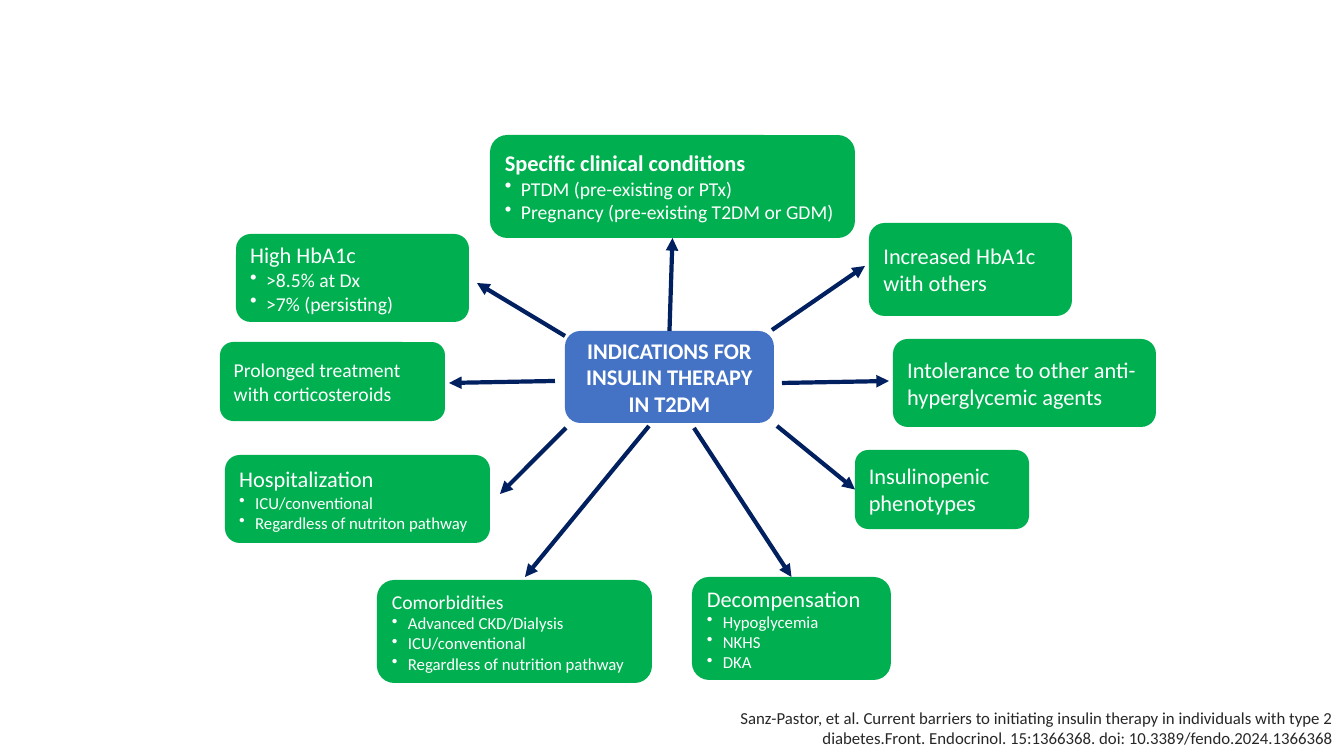
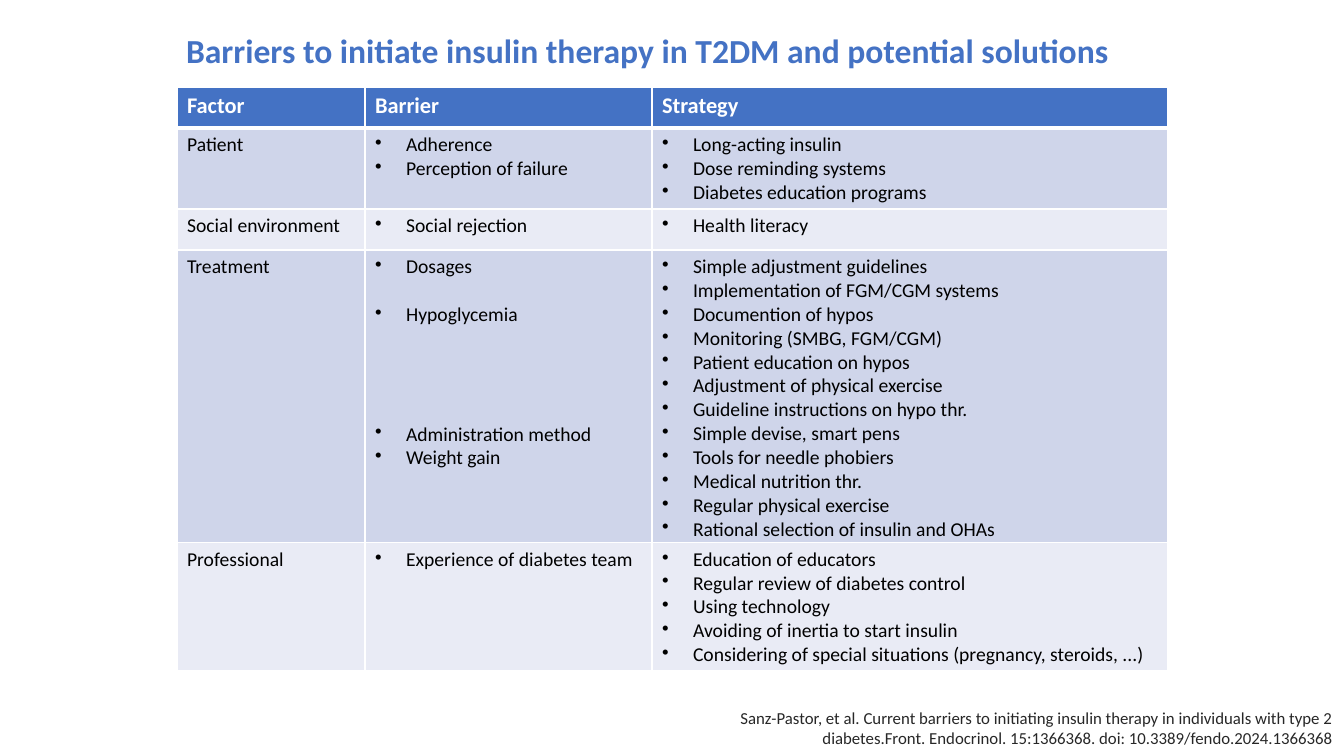
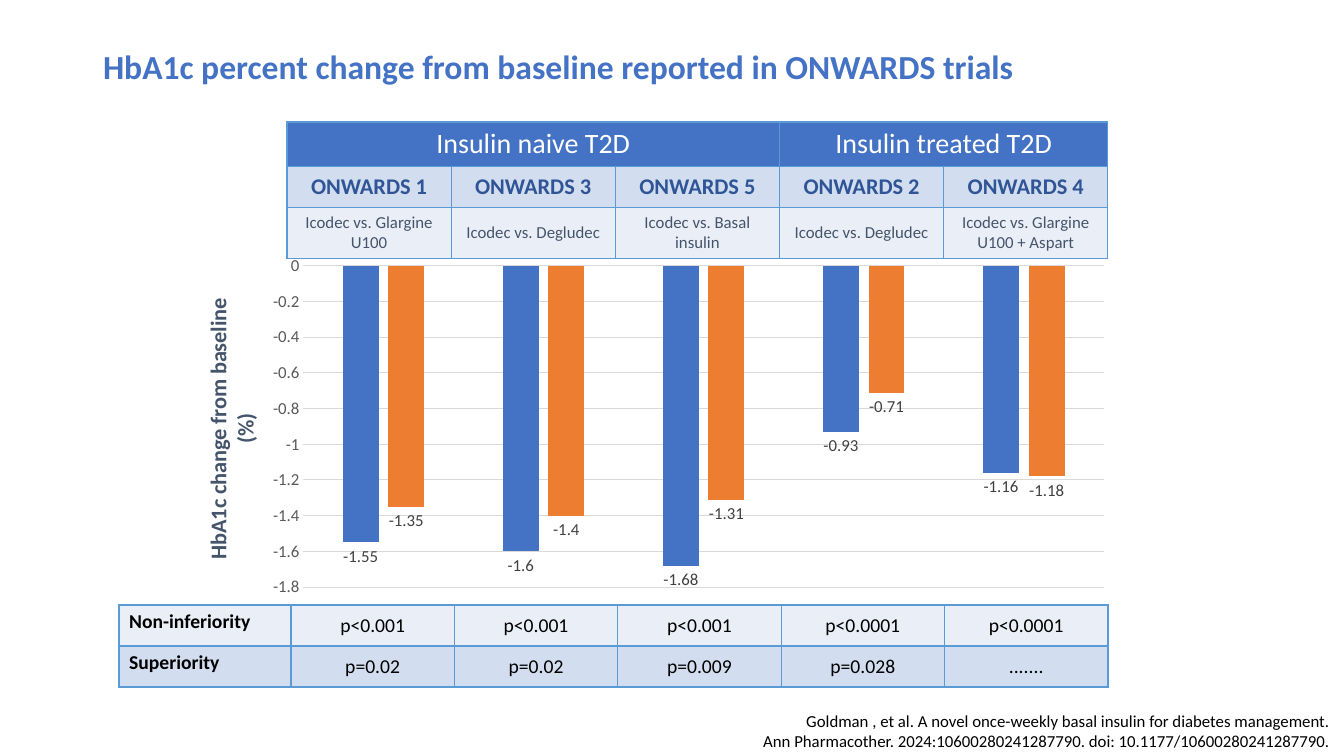
"""Build three slides on insulin therapy in type 2 diabetes."""
from lxml.etree import SubElement
from pptx import Presentation
from pptx.chart.data import CategoryChartData
from pptx.dml.color import RGBColor
from pptx.enum.chart import XL_CHART_TYPE as ChartType, XL_LABEL_POSITION as LabelAt, XL_TICK_MARK as Tick
from pptx.enum.shapes import MSO_CONNECTOR as Connector, MSO_SHAPE as Shape
from pptx.enum.text import MSO_ANCHOR as Anchor, MSO_AUTO_SIZE as AutoSize, PP_ALIGN as Align
from pptx.oxml import parse_xml
from pptx.oxml.ns import nsdecls, qn
from pptx.util import Pt

PX = 914400 / 100.8
FONT = "Calibri"
LINE_PT = 17.1
COLORS = {
    "blue": "4472C4", "green": "00B050", "navy": "002060", "orange": "ED7D31",
    "white": "FFFFFF", "black": "000000", "source": "272727",
    "lilac": "CFD5EA", "pale_lilac": "E9EBF5", "sky": "D2DEEF", "pale_sky": "EAEFF7",
    "border": "5B9BD5", "trial": "2F5597", "slate": "44546A",
    "tick": "595959", "label": "404040", "grid": "D9D9D9",
}

BARRIERS_SOURCE = [
    "Sanz-Pastor, et al. Current barriers to initiating insulin therapy in individuals with type 2 "
    "diabetes.Front. Endocrinol. 15:1366368. doi: 10.3389/fendo.2024.1366368",
]
BARRIERS_SOURCE_BOX = (687, 703, 656, 50)
TRIALS_SOURCE = [
    "Goldman , et al. A novel once-weekly basal insulin for diabetes management.",
    "Ann Pharmacother. 2024:10600280241287790. doi: 10.1177/10600280241287790.",
]
TRIALS_SOURCE_BOX = (753, 706, 587, 50)

HUB = ("INDICATIONS FOR INSULIN THERAPY IN T2DM", (565, 331, 209, 92))
INDICATIONS = [
    ("Specific clinical conditions", 16, ["PTDM (pre-existing or PTx)", "Pregnancy (pre-existing T2DM or GDM)"], 14,
     (490, 135, 365, 103), (669, 331), (672, 239)),
    ("High HbA1c", 16, [">8.5% at Dx", ">7% (persisting)"], 14,
     (236, 234, 233, 88), (565, 336), (477, 283)),
    ("Prolonged treatment with corticosteroids", 14, [], 14,
     (220, 342, 225, 79), (555, 381), (449, 383)),
    ("Hospitalization", 16, ["ICU/conventional", "Regardless of nutriton pathway"], 12,
     (225, 455, 265, 88), (566, 428), (500, 494)),
    ("Comorbidities", 14, ["Advanced CKD/Dialysis", "ICU/conventional", "Regardless of nutrition pathway"], 12,
     (377, 580, 275, 103), (649, 426), (525, 577)),
    ("Insulinopenic phenotypes", 16, [], 12,
     (855, 450, 174, 79), (777, 426), (853, 489)),
    ("Decompensation", 16, ["Hypoglycemia", "NKHS", "DKA"], 12,
     (692, 577, 199, 103), (694, 428), (791, 577)),
    ("Intolerance to other anti-hyperglycemic agents", 16, [], 12,
     (893, 339, 263, 88), (782, 383), (889, 381)),
    ("Increased HbA1c with others", 16, [], 12,
     (869, 223, 203, 93), (772, 330), (865, 266)),
]
BOLD_INDICATION = "Specific clinical conditions"

BARRIERS_TITLE = "Barriers to initiate insulin therapy in T2DM and potential solutions"
BARRIERS_HEADER = ["Factor", "Barrier", "Strategy"]
BARRIERS = [
    ("Patient", ["Adherence", "Perception of failure"],
     ["Long-acting insulin", "Dose reminding systems", "Diabetes education programs"]),
    ("Social environment", ["Social rejection"], ["Health literacy"]),
    ("Treatment", ["Dosages", "Hypoglycemia", "Administration method", "Weight gain"],
     ["Simple adjustment guidelines", "Implementation of FGM/CGM systems", "Documention of hypos",
      "Monitoring (SMBG, FGM/CGM)", "Patient education on hypos", "Adjustment of physical exercise",
      "Guideline instructions on hypo thr.", "Simple devise, smart pens", "Tools for needle phobiers",
      "Medical nutrition thr.", "Regular physical exercise", "Rational selection of insulin and OHAs"]),
    ("Professional", ["Experience of diabetes team"],
     ["Education of educators", "Regular review of diabetes control", "Using technology",
      "Avoiding of inertia to start insulin", "Considering of special situations (pregnancy, steroids, ...)"]),
]
LINES_ABOVE = {"Hypoglycemia": 1, "Administration method": 4}

TRIALS_TITLE = "HbA1c percent change from baseline reported in ONWARDS trials"
POPULATIONS = [("Insulin naive T2D", 0, 2), ("Insulin treated T2D", 3, 4)]
TRIALS = ["ONWARDS 1", "ONWARDS 3", "ONWARDS 5", "ONWARDS 2", "ONWARDS 4"]
COMPARISONS = ["Icodec vs. Glargine U100", "Icodec vs. Degludec", "Icodec vs. Basal insulin",
               "Icodec vs. Degludec", "Icodec vs. Glargine U100 + Aspart"]
AXIS_TITLE = "HbA1c change from baseline (%)"
CHANGES = [
    ("Series 1", "blue", [-1.55, -1.6, -1.68, -0.93, -1.16]),
    ("Series 2", "orange", [-1.35, -1.4, -1.31, -0.71, -1.18]),
]
P_VALUES = [
    ("Non-inferiority", "pale_sky", ["p<0.001", "p<0.001", "p<0.001", "p<0.0001", "p<0.0001"]),
    ("Superiority", "sky", ["p=0.02", "p=0.02", "p=0.009", "p=0.028", "......."]),
]


def px(*lengths):
    return [round(length * PX) for length in lengths]


def rgb(color):
    return RGBColor.from_string(COLORS[color])


def style_font(font, size, color, bold=False):
    font.name, font.size, font.bold = FONT, Pt(size), bold
    font.color.rgb = rgb(color)


def add_line(frame, text, size, color, bold=False, align=Align.LEFT, indent=0, lines_above=0):
    first = frame.paragraphs[0]
    line = frame.add_paragraph() if first.runs else first
    line.alignment = align
    if lines_above:
        line.space_before = Pt(lines_above * LINE_PT)
    if indent:
        props = line._p.get_or_add_pPr()
        hang = px(indent)[0]
        props.set("marL", str(hang))
        props.set("indent", str(-hang))
        SubElement(props, qn("a:buChar")).set("char", "•")
    run = line.add_run()
    run.text = text
    style_font(run.font, size, color, bold)
    return line


def add_title(slide, text, box):
    title = slide.shapes.title
    title.left, title.top, title.width, title.height = px(*box)
    frame = title.text_frame
    frame.auto_size, frame.vertical_anchor = AutoSize.NONE, Anchor.MIDDLE
    add_line(frame, text, 24, "blue", True).line_spacing = 0.9


def add_source(slide, lines, box, color):
    frame = slide.shapes.add_textbox(*px(*box)).text_frame
    frame.word_wrap = True
    for text in lines:
        add_line(frame, text, 12, color, align=Align.RIGHT)


def add_card(slide, box, color):
    card = slide.shapes.add_shape(Shape.ROUNDED_RECTANGLE, *px(*box))
    card.shadow.inherit = False
    card.fill.solid()
    card.fill.fore_color.rgb = rgb(color)
    card.line.fill.background()
    return card


def side_at(box, point):
    left, top, width, height = box
    middles = [(left + width / 2, top), (left, top + height / 2),
               (left + width / 2, top + height), (left + width, top + height / 2)]
    for side, (x, y) in enumerate(middles):
        if max(abs(x - point[0]), abs(y - point[1])) <= 2:
            return side
    return None


def add_arrow(slide, hub, hub_box, card, card_box, start, end):
    arrow = slide.shapes.add_connector(Connector.STRAIGHT, *px(*start, *end))
    arrow.line.color.rgb = rgb("navy")
    arrow.line.width = Pt(3)
    SubElement(arrow.line._get_or_add_ln(), qn("a:tailEnd")).set("type", "triangle")
    SubElement(arrow._element.spPr, qn("a:effectLst"))
    hub_side, card_side = side_at(hub_box, start), side_at(card_box, end)
    if hub_side is not None:
        arrow.begin_connect(hub, hub_side)
    if card_side is not None:
        arrow.end_connect(card, card_side)


def add_grid(slide, left, top, widths, heights):
    frame = slide.shapes.add_table(len(heights), len(widths), *px(left, top, sum(widths), sum(heights)))
    table = frame.table
    table.first_row = table.horz_banding = False
    for column, width in zip(table.columns, px(*widths)):
        column.width = width
    for row, height in zip(table.rows, px(*heights)):
        row.height = height
    return table


def style_cell(cell, fill, border, bottom_pt=1, anchor=Anchor.TOP):
    cell.vertical_anchor = anchor
    props = cell._tc.get_or_add_tcPr()
    for edge, width in (("lnL", 1), ("lnR", 1), ("lnT", 1), ("lnB", bottom_pt)):
        line = SubElement(props, qn("a:" + edge))
        line.set("w", str(Pt(width)))
        SubElement(SubElement(line, qn("a:solidFill")), qn("a:srgbClr")).set("val", COLORS[border])
    cell.fill.solid()
    cell.fill.fore_color.rgb = rgb(fill)
    return cell.text_frame


def layout_xml(inner=False, **sizes):
    target = '<c:layoutTarget val="inner"/>' if inner else ""
    modes = '<c:xMode val="edge"/><c:yMode val="edge"/>'
    values = "".join(f'<c:{key} val="{value}"/>' for key, value in sizes.items())
    return parse_xml(f'<c:layout {nsdecls("c")}><c:manualLayout>{target}{modes}{values}</c:manualLayout></c:layout>')


def set_layout(owner, position, layout):
    for old in owner.findall(qn("c:layout")):
        owner.remove(old)
    owner.insert(position, layout)


def build_indications(slide):
    add_source(slide, BARRIERS_SOURCE, BARRIERS_SOURCE_BOX, "source")
    hub_text, hub_box = HUB
    hub = add_card(slide, hub_box, "blue")
    add_line(hub.text_frame, hub_text, 16, "white", True, Align.CENTER)
    for heading, size, details, detail_size, box, start, end in INDICATIONS:
        card = add_card(slide, box, "green")
        add_line(card.text_frame, heading, size, "white", heading == BOLD_INDICATION)
        for detail in details:
            add_line(card.text_frame, detail, detail_size, "white", indent=16)
        add_arrow(slide, hub, hub_box, card, box, start, end)


def build_barriers(slide):
    add_title(slide, BARRIERS_TITLE, (176, 28, 992, 50))
    add_source(slide, BARRIERS_SOURCE, BARRIERS_SOURCE_BOX, "source")
    table = add_grid(slide, 177, 87, [188, 287, 516], [41, 81, 41, 291, 128])
    for column, heading in enumerate(BARRIERS_HEADER):
        frame = style_cell(table.cell(0, column), "blue", "white", 3)
        add_line(frame, heading, 16, "white", True)
    for row, (factor, *lists) in enumerate(BARRIERS, 1):
        fill = "lilac" if row % 2 else "pale_lilac"
        add_line(style_cell(table.cell(row, 0), fill, "white"), factor, 14, "black")
        for column, entries in enumerate(lists, 1):
            frame = style_cell(table.cell(row, column), fill, "white")
            for entry in entries:
                add_line(frame, entry, 14, "black", indent=31, lines_above=LINES_ABOVE.get(entry, 0))


def add_changes_chart(slide):
    data = CategoryChartData()
    data.categories = ["1", "2", "3", "4", "5"]
    for name, _, values in CHANGES:
        data.add_series(name, values)
    chart = slide.shapes.add_chart(ChartType.COLUMN_CLUSTERED, *px(170, 248, 953, 357), data).chart
    chart.has_legend = chart.has_title = False
    style_font(chart.font, 10, "black")
    chart.category_axis.visible = False
    axis = chart.value_axis
    axis.minimum_scale, axis.maximum_scale, axis.major_unit = -1.8, 0, 0.2
    axis.major_tick_mark = axis.minor_tick_mark = Tick.NONE
    axis.format.line.fill.background()
    axis.major_gridlines.format.line.color.rgb = rgb("grid")
    axis.major_gridlines.format.line.width = Pt(0.75)
    style_font(axis.tick_labels.font, 12, "tick")
    add_line(axis.axis_title.text_frame, AXIS_TITLE, 16, "slate", True, Align.CENTER)
    body = axis.axis_title.text_frame._txBody.find(qn("a:bodyPr"))
    body.set("rot", "-5400000")
    body.set("vert", "horz")
    set_layout(axis.axis_title._element, 1, layout_xml(x=0.03, y=0.13))
    set_layout(chart._chartSpace.chart.plotArea, 0, layout_xml(True, x=0.14, y=0.05, w=0.84, h=0.9))
    plot = chart.plots[0]
    plot.gap_width, plot.overlap, plot.vary_by_categories = 219, -27, False
    for series, (_, color, _) in zip(plot.series, CHANGES):
        series.invert_if_negative = False
        series.format.fill.solid()
        series.format.fill.fore_color.rgb = rgb(color)
        labels = series.data_labels
        labels.show_value, labels.position = True, LabelAt.OUTSIDE_END
        style_font(labels.font, 12, "label")


def build_trials(slide):
    add_title(slide, TRIALS_TITLE, (93, 28, 1159, 81))
    add_changes_chart(slide)

    results = add_grid(slide, 119, 605, [172] + [817 / 5] * 5, [41, 41])
    for row, (test, fill, values) in enumerate(P_VALUES):
        add_line(style_cell(results.cell(row, 0), fill, "border"), test, 14, "black", True)
        for column, value in enumerate(values, 1):
            frame = style_cell(results.cell(row, column), fill, "border", anchor=Anchor.MIDDLE)
            add_line(frame, value, 14, "black", align=Align.CENTER)

    trials = add_grid(slide, 287, 122, [821 / 5] * 5, [44, 41, 51])
    for column in range(len(TRIALS)):
        style_cell(trials.cell(0, column), "blue", "border", anchor=Anchor.MIDDLE)
    for population, first, last in POPULATIONS:
        trials.cell(0, first).merge(trials.cell(0, last))
        add_line(trials.cell(0, first).text_frame, population, 20, "white", align=Align.CENTER)
    trial_rows = [(TRIALS, "sky", 16, "trial", True), (COMPARISONS, "pale_sky", 12, "slate", False)]
    for row, (texts, fill, size, color, bold) in enumerate(trial_rows, 1):
        for column, text in enumerate(texts):
            frame = style_cell(trials.cell(row, column), fill, "border", anchor=Anchor.MIDDLE)
            add_line(frame, text, size, color, bold, Align.CENTER)

    add_source(slide, TRIALS_SOURCE, TRIALS_SOURCE_BOX, "black")


def main():
    deck = Presentation()
    deck.slide_width, deck.slide_height = px(1344, 756)
    title_only, blank = deck.slide_layouts[5], deck.slide_layouts[6]
    for build, layout in ((build_indications, blank), (build_barriers, title_only), (build_trials, title_only)):
        build(deck.slides.add_slide(layout))
    deck.save("out.pptx")


if __name__ == "__main__":
    main()
